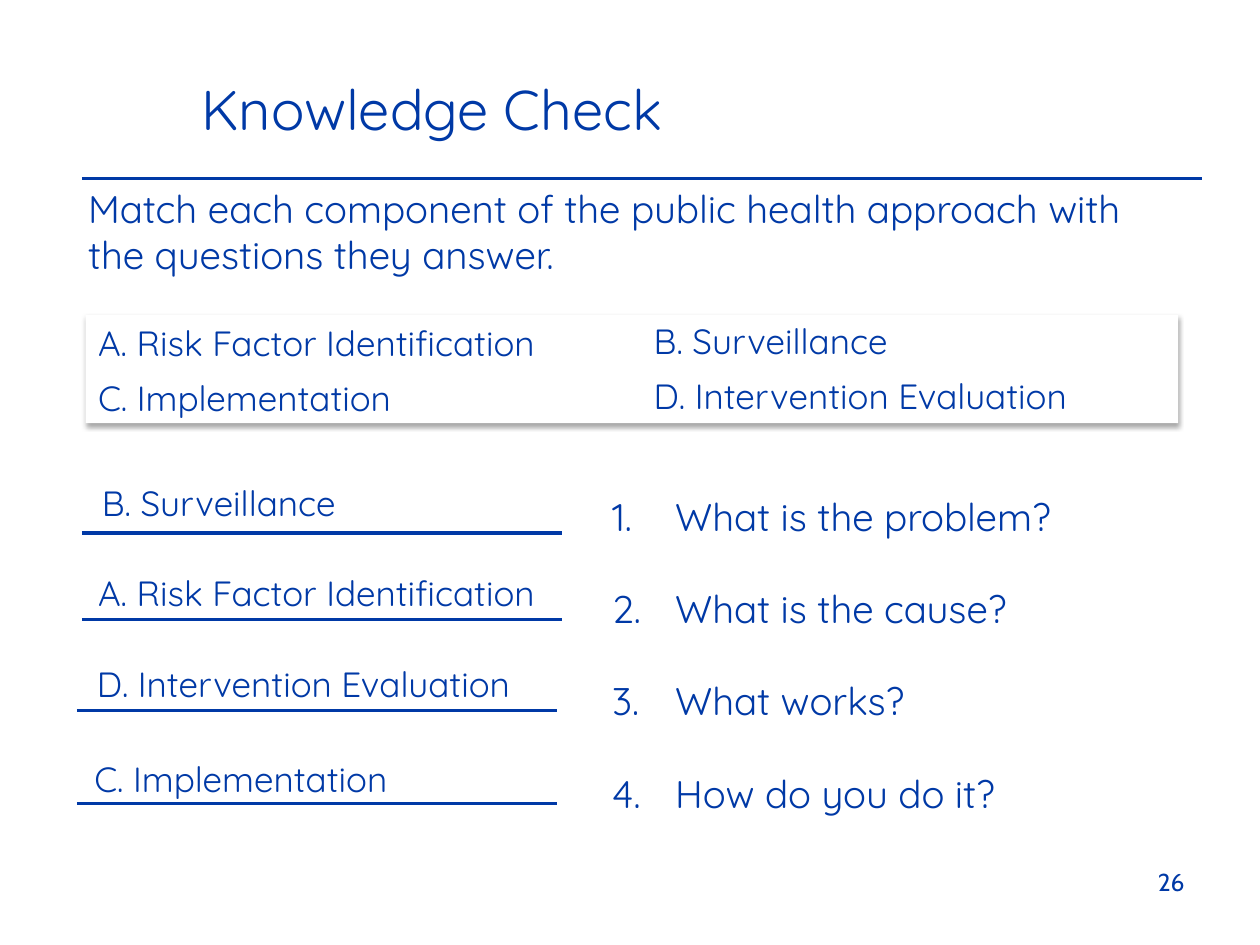
from lxml.etree import SubElement
from pptx import Presentation
from pptx.dml.color import RGBColor
from pptx.enum.shapes import MSO_CONNECTOR, MSO_SHAPE
from pptx.enum.text import MSO_ANCHOR, PP_ALIGN
from pptx.oxml.ns import qn
from pptx.util import Inches, Pt

COLUMNS, ROWS = 100, 75
BLUE, WHITE, BLACK = "0039A6", "FFFFFF", "000000"


def color(code):
    """Turn a hex string into a colour."""
    return RGBColor.from_string(code)


def apply(target, values):
    """Set each named attribute on the target."""
    for name, value in values.items():
        setattr(target, name, value)


class Sheet:
    """Hold the style and the current slide, and draw its elements."""

    def __init__(self, deck):
        """Add a blank slide and keep the size of a grid cell."""
        self.page = deck.slides.add_slide(deck.slide_layouts[6])
        self.cell_width = deck.slide_width / COLUMNS
        self.cell_height = deck.slide_height / ROWS
        self.frame_format = {"word_wrap": True, "vertical_anchor": MSO_ANCHOR.TOP}

    def place(self, column, row):
        """Turn columns and rows into lengths."""
        return round(column * self.cell_width), round(row * self.cell_height)

    def text(self, left, top, width, height, lines, size=20, font="Quicksand",
             align=PP_ALIGN.LEFT, numbered=False, gap=0):
        """Add a text box with one paragraph for each line."""
        box = self.page.shapes.add_textbox(*self.place(left, top), *self.place(width, height))
        frame = box.text_frame
        apply(frame, self.frame_format)
        for index, line in enumerate(lines):
            para = frame.paragraphs[0] if index == 0 else frame.add_paragraph()
            if numbered:
                self.number(para)
            apply(para, {"alignment": align, "space_before": Pt(gap if index else 0)})
            span = para.add_run()
            span.text = line
            apply(span.font, {"size": Pt(size), "name": font})
            span.font.color.rgb = color(BLUE)

    def number(self, para):
        """Give the paragraph a hanging automatic number."""
        properties = para._p.get_or_add_pPr()
        indent = Inches(0.5)
        properties.set("marL", str(indent))
        properties.set("indent", str(-indent))
        SubElement(properties, qn("a:buFont"), typeface="Quicksand")
        SubElement(properties, qn("a:buAutoNum"), type="arabicPeriod")

    def rule(self, left, row, width):
        """Add a horizontal line."""
        line = self.page.shapes.add_connector(
            MSO_CONNECTOR.STRAIGHT, *self.place(left, row), *self.place(left + width, row))
        line.line.width = Pt(1.75)
        line.line.color.rgb = color(BLUE)
        SubElement(line._element.spPr, qn("a:effectLst"))

    def panel(self, left, top, width, height):
        """Add a white panel with a soft shadow below it."""
        panel = self.page.shapes.add_shape(
            MSO_SHAPE.RECTANGLE, *self.place(left, top), *self.place(width, height))
        panel.fill.solid()
        panel.fill.fore_color.rgb = color(WHITE)
        panel.line.fill.background()
        panel.shadow.inherit = False
        effects = panel._element.spPr.find(qn("a:effectLst"))
        shadow = SubElement(effects, qn("a:outerShdw"), blurRad=str(Pt(3.1)),
                            dist=str(Pt(1.8)), dir="5400000", rotWithShape="0")
        shade = SubElement(shadow, qn("a:srgbClr"), val=BLACK)
        SubElement(shade, qn("a:alpha"), val="35000")


def main():
    """Build the knowledge check slide."""
    deck = Presentation()
    apply(deck, {"slide_width": Inches(10), "slide_height": Inches(7.5)})
    sheet = Sheet(deck)
    risk, surveillance = "A. Risk Factor Identification", "B. Surveillance"
    implementation, evaluation = "C. Implementation", "D. Intervention Evaluation"

    sheet.text(6, 14.2, 88.2, 8.4, [
        "Match each component of the public health approach with the questions they answer."],
        size=22)
    sheet.panel(6.8, 25, 86.7, 8.6)
    choices = [(6.8, 25, risk), (50.9, 24.9, surveillance),
               (6.8, 29.4, implementation), (50.9, 29.2, evaluation)]
    for left, top, choice in choices:
        sheet.text(left, top, 40.7, 4.4, [choice])

    sheet.text(47.6, 38.6, 44.1, 26.9, [
        "What is the problem?", "What is the cause?", "What works?", "How do you do it?"],
        size=22, numbered=True, gap=26.4)
    answers = [(7.1, 37.7, surveillance, 6.5, 42.3), (6.8, 44.9, risk, 6.5, 49.2),
               (6.7, 52.1, evaluation, 6.1, 56.4), (6.5, 59.6, implementation, 6.1, 63.8)]
    for left, top, answer, rule_left, rule_row in answers:
        sheet.text(left, top, 39.1, 4.4, [answer])
        sheet.rule(rule_left, rule_row, 38.1)

    sheet.text(15, 5.4, 42.5, 6.4, ["Knowledge Check"], size=32)
    sheet.rule(6.5, 14.2, 88.9)
    sheet.text(71.7, 68.3, 23.3, 5.2, ["26"], size=14, font="Cabin", align=PP_ALIGN.RIGHT)
    deck.save("out.pptx")


if __name__ == "__main__":
    main()
